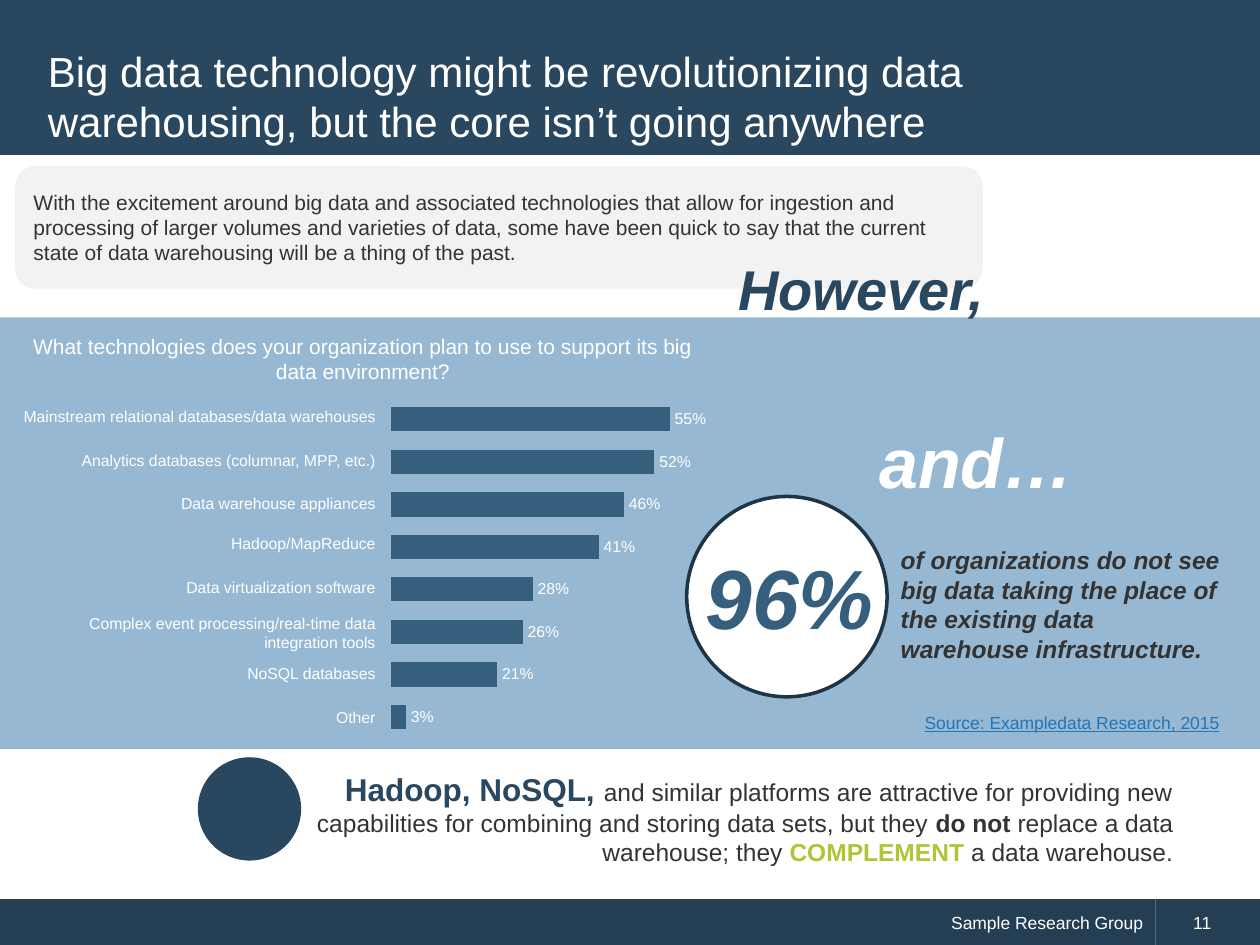
from dataclasses import dataclass

from lxml.etree import SubElement
from pptx import Presentation
from pptx.chart.data import CategoryChartData
from pptx.dml.color import RGBColor
from pptx.enum.chart import XL_CHART_TYPE as ChartType, XL_LABEL_POSITION as LabelPosition
from pptx.enum.shapes import MSO_SHAPE as Preset
from pptx.enum.text import MSO_ANCHOR as Anchor, MSO_AUTO_SIZE as AutoSize, PP_ALIGN as Align
from pptx.oxml.ns import qn
from pptx.util import Inches, Pt


@dataclass(frozen=True)
class Theme:
    font: str = "Arial"
    white: str = "FFFFFF"
    panel: str = "F2F2F2"
    ink: str = "333333"
    navy: str = "29475F"
    footer: str = "243F54"
    outline: str = "1E3546"
    sky: str = "96B8D2"
    steel: str = "365F7E"
    lime: str = "B0C534"
    link: str = "2576B7"
    label: int = 9
    small: int = 10
    text: int = 12
    lead: int = 14
    key: int = 18
    title: int = 24
    turn: int = 32
    bridge: int = 40
    figure: int = 48


THEME = Theme()
COLUMNS, ROWS = 100, 75


class SlideBuilder:
    """Places elements on a grid of 100 columns by 75 rows."""

    def __init__(self, deck, theme):
        self.theme = theme
        self.column = deck.slide_width / COLUMNS
        self.row = deck.slide_height / ROWS
        self.slide = deck.slides.add_slide(deck.slide_layouts[1])

    def cells(self, left, top, width, height):
        return (round(left * self.column), round(top * self.row),
                round(width * self.column), round(height * self.row))

    def words(self, text, size, color, bold=False, italic=False, underline=False):
        """Describe a run for fill_text()."""
        return text, size, color, bold, italic, underline

    def fill_text(self, frame, paragraphs, align=Align.LEFT, anchor=Anchor.TOP, gaps=None):
        """Fill a frame; each paragraph is a list of runs, gaps are points after each."""
        frame.word_wrap = True
        frame.auto_size = AutoSize.NONE
        frame.vertical_anchor = anchor
        for index, runs in enumerate(paragraphs):
            paragraph = frame.add_paragraph() if index else frame.paragraphs[0]
            paragraph.alignment = align
            paragraph.space_before = Pt(0)
            paragraph.space_after = Pt(gaps[index] if gaps else 0)
            for text, size, color, bold, italic, underline in runs:
                piece = paragraph.add_run()
                piece.text = text
                font = piece.font
                font.name, font.size = self.theme.font, Pt(size)
                font.bold, font.italic, font.underline = bold, italic, underline
                font.color.rgb = RGBColor.from_string(color)

    def shape(self, preset, place, fill, outline=None):
        shape = self.slide.shapes.add_shape(preset, *self.cells(*place))
        shape.shadow.inherit = False
        shape.fill.solid()
        shape.fill.fore_color.rgb = RGBColor.from_string(fill)
        if outline:
            shape.line.color.rgb = RGBColor.from_string(outline)
            shape.line.width = Pt(2)
        else:
            shape.line.fill.background()
        return shape

    def text(self, place, runs, align=Align.LEFT):
        box = self.slide.shapes.add_textbox(*self.cells(*place))
        self.fill_text(box.text_frame, [runs], align)

    def place(self, holder, place):
        """Move a placeholder to a grid place and in front of what is drawn so far."""
        holder.left, holder.top, holder.width, holder.height = self.cells(*place)
        holder.element.getparent().append(holder.element)
        return holder.text_frame

    def title(self, place, runs):
        frame = self.place(self.slide.shapes.title, place)
        self.fill_text(frame, [runs], anchor=Anchor.MIDDLE)

    def labels(self, place, paragraphs, gaps):
        frame = self.place(self.slide.placeholders[1], place)
        self.fill_text(frame, paragraphs, Align.RIGHT, gaps=gaps)
        for paragraph in frame.paragraphs:
            properties = paragraph._p.get_or_add_pPr()
            properties.set("marL", "0")
            properties.set("indent", "0")
            SubElement(properties, qn("a:buNone"))

    def bars(self, place, values, maximum, plot):
        """Bar chart without axes; plot gives the inner area as shares of the chart."""
        data = CategoryChartData(number_format="0%")
        data.categories = [str(number + 1) for number in range(len(values))]
        data.add_series("Series 1", values)
        chart = self.slide.shapes.add_chart(
            ChartType.BAR_CLUSTERED, *self.cells(*place), data).chart
        chart.has_legend = chart.has_title = False
        chart.font.name, chart.font.size = self.theme.font, Pt(self.theme.small)
        chart.font.color.rgb = RGBColor.from_string(self.theme.ink)
        chart.category_axis.reverse_order = True
        chart.value_axis.minimum_scale, chart.value_axis.maximum_scale = 0, maximum
        chart.value_axis.has_major_gridlines = False
        chart.category_axis.visible = chart.value_axis.visible = False

        bar_plot = chart.plots[0]
        bar_plot.gap_width = 75
        bar_plot.vary_by_categories = False
        fill = bar_plot.series[0].format.fill
        fill.solid()
        fill.fore_color.rgb = RGBColor.from_string(self.theme.steel)
        bar_plot.has_data_labels = True
        labels = bar_plot.data_labels
        labels.show_value = True
        labels.position = LabelPosition.OUTSIDE_END
        labels.number_format, labels.number_format_is_linked = "0%", False
        labels.font.name, labels.font.size = self.theme.font, Pt(self.theme.label)
        labels.font.color.rgb = RGBColor.from_string(self.theme.white)

        area = chart.element.find(".//" + qn("c:plotArea"))
        layout = area.find(qn("c:layout"))
        if layout is None:
            layout = SubElement(area, qn("c:layout"))
            area.insert(0, layout)
        manual = SubElement(layout, qn("c:manualLayout"))
        settings = [("layoutTarget", "inner"), ("xMode", "edge"), ("yMode", "edge"),
                    *zip("xywh", plot)]
        for name, value in settings:
            SubElement(manual, qn("c:" + name)).set("val", str(value))


TECHNOLOGIES = [  # name, share of organizations, points after the label
    ("Mainstream relational databases/data warehouses", 0.55, 14),
    ("Analytics databases (columnar, MPP, etc.)", 0.52, 14),
    ("Data warehouse appliances", 0.46, 12),
    ("Hadoop/MapReduce", 0.41, 14),
    ("Data virtualization software", 0.28, 10),
    ("Complex event processing/real-time data integration tools", 0.26, 7),
    ("NoSQL databases", 0.21, 14),
    ("Other", 0.03, 0),
]


def main():
    deck = Presentation()
    deck.slide_width, deck.slide_height = Inches(10), Inches(7.5)
    t = THEME
    page = SlideBuilder(deck, t)
    words = page.words

    publisher = page.shape(Preset.RECTANGLE, (0, 71.35, 91.7, 3.65), t.footer)
    page.fill_text(publisher.text_frame, [[words("Sample Research Group", t.small, t.white)]],
                   Align.RIGHT, Anchor.MIDDLE)
    number = page.shape(Preset.RECTANGLE, (91.7, 71.35, 8.3, 3.65), t.footer)
    number.text_frame.margin_left = Inches(0.3)
    page.fill_text(number.text_frame, [[words("11", t.small, t.white)]], anchor=Anchor.MIDDLE)
    page.shape(Preset.RECTANGLE, (0, 0, 100, 12.3), t.navy)
    page.shape(Preset.RECTANGLE, (0, 25.2, 100, 34.25), t.sky)
    page.shape(Preset.OVAL, (54.5, 39.4, 15.9, 15.9), t.white, t.outline)
    page.title((2.8, 2.8, 94.3, 9.6), [words(
        "Big data technology might be revolutionizing data warehousing, "
        "but the core isn’t going anywhere", t.title, t.white)])

    page.text((21, 60.6, 73.1, 8.8), [
        words("Hadoop, NoSQL, ", t.key, t.navy, bold=True),
        words("and similar platforms are attractive for providing new capabilities for "
              "combining and storing data sets, but they ", t.lead, t.ink),
        words("do not ", t.lead, t.ink, bold=True),
        words("replace a data warehouse; they ", t.lead, t.ink),
        words("COMPLEMENT ", t.lead, t.lime, bold=True),
        words("a data warehouse.", t.lead, t.ink)], Align.RIGHT)
    page.text((70.5, 42.8, 27.5, 10.4), [words(
        "of organizations do not see big data taking the place of the existing data "
        "warehouse infrastructure.", t.lead, t.ink, bold=True, italic=True)])
    page.text((55, 42.8, 17.3, 9.1), [words("96%", t.figure, t.steel, bold=True, italic=True)])

    names, shares, gaps = zip(*TECHNOLOGIES)
    page.bars((29.6, 30.1, 35.5, 30), shares, 0.6, (0.04, 0.05, 0.68, 0.9))
    page.labels((0.5, 31.8, 30.3, 26.6),
                [[words(name, t.label, t.white)] for name in names], gaps)
    page.text((68.8, 32.7, 27.7, 7.7), [words("and…", t.bridge, t.white, bold=True, italic=True)])
    page.shape(Preset.OVAL, (15.7, 60.1, 8.2, 8.2), t.navy)
    page.text((1.2, 26, 55.2, 5), [words(
        "What technologies does your organization plan to use to support its big data "
        "environment?", t.text, t.white)], Align.CENTER)
    excitement = page.shape(Preset.ROUNDED_RECTANGLE, (1.2, 13.2, 76.8, 9.7), t.panel)
    page.fill_text(excitement.text_frame, [[words(
        "With the excitement around big data and associated technologies that allow for "
        "ingestion and processing of larger volumes and varieties of data, some have been "
        "quick to say that the current state of data warehousing will be a thing of the past.",
        t.text, t.ink)]], anchor=Anchor.MIDDLE)
    page.text((57.6, 19.7, 27.7, 6.4),
              [words("However,", t.turn, t.navy, bold=True, italic=True)])
    page.text((72.4, 56, 25.7, 2.7),
              [words("Source: Exampledata Research, 2015", t.small, t.link, underline=True)])
    deck.save("out.pptx")


if __name__ == "__main__":
    main()
